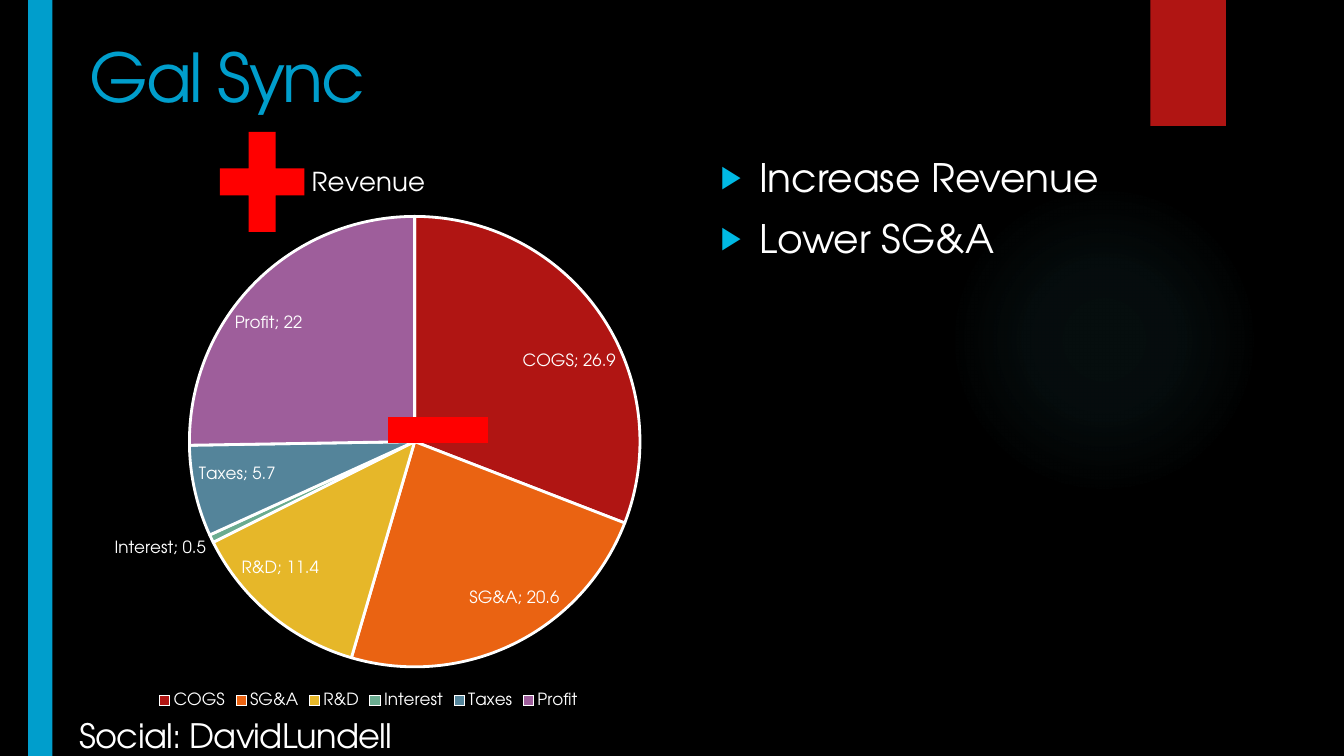
from lxml.etree import SubElement
from pptx import Presentation
from pptx.chart.data import CategoryChartData
from pptx.dml.color import RGBColor
from pptx.enum.chart import XL_CHART_TYPE, XL_LABEL_POSITION, XL_LEGEND_POSITION
from pptx.enum.shapes import MSO_SHAPE
from pptx.enum.text import MSO_ANCHOR
from pptx.oxml import parse_xml
from pptx.oxml.ns import nsdecls, qn
from pptx.util import Inches, Pt

FONT = "TeX Gyre Adventor"
BLACK = RGBColor(0, 0, 0)
WHITE = RGBColor(0xFF, 0xFF, 0xFF)
BLUE = RGBColor(0x00, 0x9E, 0xCC)
BULLET_BLUE = RGBColor(0x00, 0xB9, 0xE4)
GLOW = RGBColor(0x50, 0xB9, 0xC1)
CRIMSON = RGBColor(0xB0, 0x15, 0x13)
RED = RGBColor(0xFF, 0, 0)

SLICES = [
    ("COGS", 26.9, CRIMSON),
    ("SG&A", 20.6, RGBColor(0xEA, 0x63, 0x12)),
    ("R&D", 11.4, RGBColor(0xE6, 0xB7, 0x29)),
    ("Interest", 0.5, RGBColor(0x6A, 0xAC, 0x90)),
    ("Taxes", 5.7, RGBColor(0x54, 0x84, 0x9A)),
    ("Profit", 22, RGBColor(0x9E, 0x5E, 0x9B)),
]

W, H = 13.33, 7.5
LEFT = 0.79
BODY_TOP, BODY_H = 1.47, 5.6


def set_font(font, size, color=WHITE):
    font.name = FONT
    font.size = Pt(size)
    font.color.rgb = color


def add_block(s, preset, box, color):
    sp = s.shapes.add_shape(preset, *map(Inches, box))
    sp.shadow.inherit = False
    sp.line.fill.background()
    sp.fill.solid()
    sp.fill.fore_color.rgb = color
    return sp


def add_text_box(s, box, inset=True):
    tf = s.shapes.add_textbox(*map(Inches, box)).text_frame
    tf.word_wrap = True
    if not inset:
        tf.margin_left = tf.margin_right = tf.margin_top = tf.margin_bottom = 0
    return tf


def add_run(p, text, size, color=WHITE, spacing=0):
    """Add a run; spacing is the tracking in points."""
    r = p.add_run()
    r.text = text
    set_font(r.font, size, color)
    if spacing:
        r.font._element.set("spc", str(round(spacing * 100)))


def add_glow(s, box):
    """Draw a circle that fades out from its centre."""
    sp = add_block(s, MSO_SHAPE.OVAL, box, GLOW)
    stops = "".join(
        f'<a:gs pos="{pos}000"><a:srgbClr val="{GLOW}"><a:alpha val="{alpha}000"/></a:srgbClr></a:gs>'
        for pos, alpha in [(0, 7), (36, 6), (69, 0)])
    gradient = parse_xml(
        f'<a:gradFill {nsdecls("a")}><a:gsLst>{stops}</a:gsLst><a:path path="circle">'
        '<a:fillToRect l="50000" t="50000" r="50000" b="50000"/></a:path></a:gradFill>')
    props = sp._element.spPr
    props.replace(props.find(qn("a:solidFill")), gradient)


def add_decor(s):
    s.background.fill.solid()
    s.background.fill.fore_color.rgb = BLACK
    add_glow(s, (9.41, 1.83, 3.08, 3.08))
    add_block(s, MSO_SHAPE.RECTANGLE, (11.41, 0, 0.75, H / 6), CRIMSON)
    add_block(s, MSO_SHAPE.RECTANGLE, (0.28, 0, 0.24, H), BLUE)


def add_footer(s, box, text):
    p = add_text_box(s, box, inset=False).paragraphs[0]
    p.line_spacing = 0.9
    add_run(p, text, 24, spacing=-0.5)


def add_title(s, box, text):
    tf = add_text_box(s, box)
    tf.vertical_anchor = MSO_ANCHOR.MIDDLE
    add_run(tf.paragraphs[0], text, 48, BLUE, -1.5)


def add_bullets(s, box, items):
    tf = add_text_box(s, box)
    for i, item in enumerate(items):
        p = tf.add_paragraph() if i else tf.paragraphs[0]
        if i:
            p.space_before = Pt(10)
        props = p._p.get_or_add_pPr()
        indent = Inches(0.38)
        props.set("marL", str(indent))
        props.set("indent", str(-indent))
        color = SubElement(props, qn("a:buClr"))
        SubElement(color, qn("a:srgbClr"), val=str(BULLET_BLUE))
        SubElement(props, qn("a:buSzPct"), val="80000")
        SubElement(props, qn("a:buFont"), typeface="Arial")
        SubElement(props, qn("a:buChar"), char="▶")
        add_run(p, item, 28)


def add_revenue_pie(s, box):
    data = CategoryChartData()
    data.categories = [name for name, _, _ in SLICES]
    data.add_series("Series 1", [value for _, value, _ in SLICES])
    chart = s.shapes.add_chart(XL_CHART_TYPE.PIE, *map(Inches, box), data).chart
    set_font(chart.font, 10)

    chart.has_title = True
    add_run(chart.chart_title.text_frame.paragraphs[0], "Revenue", 18.6)
    chart.chart_title.text_frame.paragraphs[0].runs[0].font.bold = False
    chart.chart_title.include_in_layout = False

    chart.has_legend = True
    chart.legend.position = XL_LEGEND_POSITION.BOTTOM
    chart.legend.include_in_layout = False
    set_font(chart.legend.font, 12)

    plot = chart.plots[0]
    plot.vary_by_categories = True
    for i, (_, _, color) in enumerate(SLICES):
        point = plot.series[0].points[i].format
        point.fill.solid()
        point.fill.fore_color.rgb = color
        point.line.color.rgb = WHITE
        point.line.width = Pt(2)

    plot.has_data_labels = True
    labels = plot.data_labels
    labels.show_category_name = labels.show_value = True
    labels.show_percentage = False
    labels.position = XL_LABEL_POSITION.BEST_FIT
    set_font(labels.font, 12)

    area = chart._chartSpace.chart.plotArea
    for old in area.findall(qn("c:layout")):
        area.remove(old)
    area.insert(0, parse_xml(
        f'<c:layout {nsdecls("c")}><c:manualLayout><c:layoutTarget val="inner"/>'
        '<c:xMode val="edge"/><c:yMode val="edge"/><c:x val="0.19"/><c:y val="0.12"/>'
        '<c:w val="0.78"/><c:h val="0.8"/></c:manualLayout></c:layout>'))


def build_slide(prs):
    s = prs.slides.add_slide(prs.slide_layouts[6])
    add_decor(s)
    add_footer(s, (LEFT, 7.14, 5.32, 0.36), "Social: DavidLundell")
    add_bullets(s, (7.05, BODY_TOP, 5.89, BODY_H), ["Increase Revenue", "Lower SG&A"])
    add_title(s, (LEFT, 0.29, 8.47, 0.93), "Gal Sync")
    add_revenue_pie(s, (LEFT, BODY_TOP, 5.73, BODY_H))
    add_block(s, MSO_SHAPE.MATH_PLUS, (2.03, 1.13, 1.14, 1.35), RED)
    add_block(s, MSO_SHAPE.MATH_MINUS, (3.67, 3.73, 1.35, 1.07), RED)


def main():
    prs = Presentation()
    prs.slide_width, prs.slide_height = Inches(W), Inches(H)
    build_slide(prs)
    prs.save("out.pptx")


if __name__ == "__main__":
    main()
